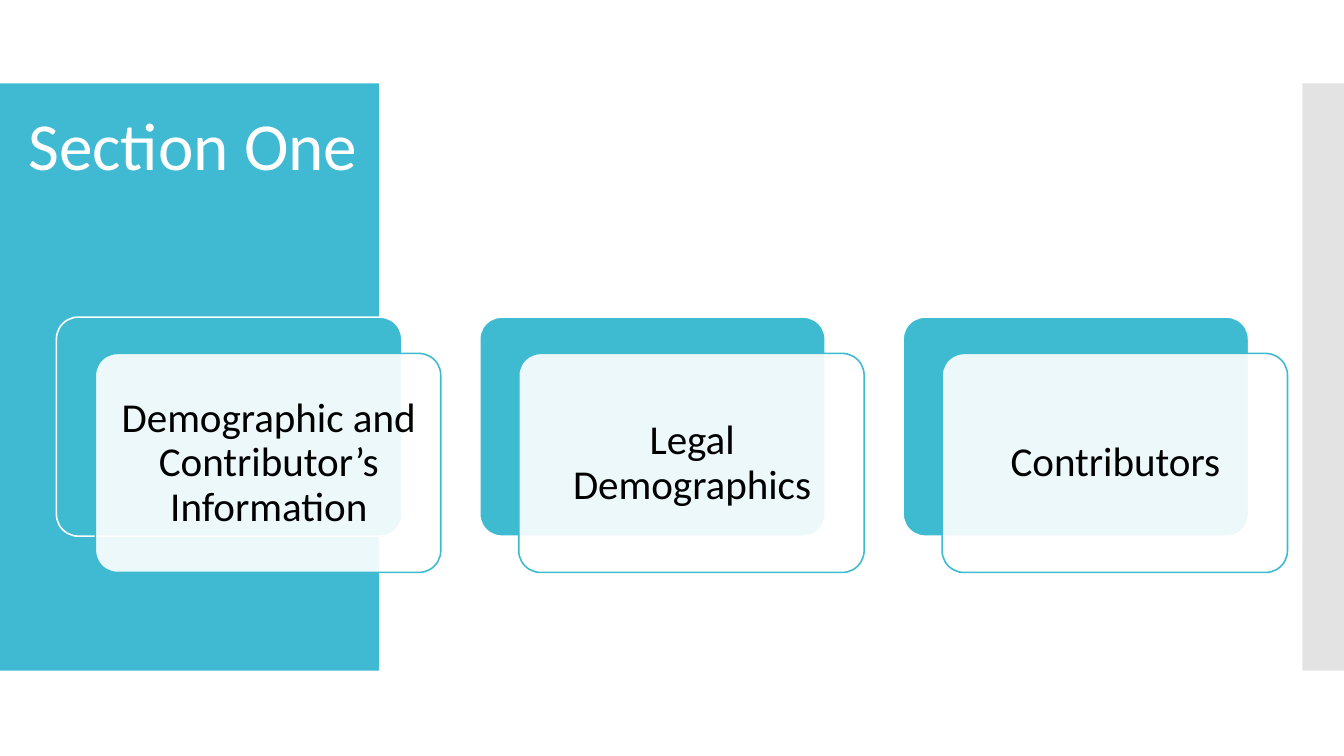
from lxml import etree
from pptx import Presentation, util as u
from pptx.dml.color import RGBColor
from pptx.enum import shapes, text
from pptx.oxml.ns import qn

COLORS = {"panel": "40BAD2", "card": "3EBAD1", "strip": "C8C8C8",
          "white": "FFFFFF", "black": "000000"}
TOPICS = ["Demographic and Contributor’s Information", "Legal Demographics", "Contributors"]


def add_block(kind, place, fill, line=None, opacity=100):
    block = slide.shapes.add_shape(kind, *map(u.Inches, place))
    block.shadow.inherit = False
    block.fill.solid()
    block.fill.fore_color.rgb = RGBColor.from_string(COLORS[fill])
    if opacity < 100:
        color = block.element.spPr.find(qn("a:solidFill"))[0]
        etree.SubElement(color, qn("a:alpha"), val=str(opacity * 1000))
    if line:
        block.line.color.rgb = RGBColor.from_string(COLORS[line])
        block.line.width = u.Pt(0.85)
        block.adjustments[0] = 0.1
    else:
        block.line.fill.background()
    return block


def write_text(box, words, size, color, inset, anchor, align, spacing):
    frame = box.text_frame
    frame.text = words
    settings = {"word_wrap": True, "auto_size": text.MSO_AUTO_SIZE.NONE, "vertical_anchor": anchor}
    for side in ("left", "top", "right", "bottom"):
        settings[f"margin_{side}"] = u.Inches(inset)
    for name, value in settings.items():
        setattr(frame, name, value)
    para = frame.paragraphs[0]
    para.alignment = align
    para.line_spacing = spacing
    span = para.runs[0]
    for name, value in {"name": "Calibri", "size": u.Pt(size)}.items():
        setattr(span.font, name, value)
    span.font.color.rgb = RGBColor.from_string(COLORS[color])


deck = Presentation()
deck.slide_width = u.Inches(10)
deck.slide_height = deck.slide_width * 9 // 16
slide = deck.slides.add_slide(deck.slide_layouts[5])

title = slide.shapes.title
for name, value in {"left": 0.11, "top": 0.5, "width": 9.47, "height": 0.97}.items():
    setattr(title, name, u.Inches(value))
write_text(title, "Section One", 36, "white", 0.1,
           text.MSO_ANCHOR.BOTTOM, text.PP_ALIGN.LEFT, 1.0)

rectangle = shapes.MSO_SHAPE.RECTANGLE
panel = add_block(rectangle, (0, 0.62, 2.82, 4.37), "panel")
strip = add_block(rectangle, (9.69, 0.62, 0.31, 4.37), "strip", opacity=50)
for backdrop in (panel, strip):
    title.element.addprevious(backdrop.element)

rounded = shapes.MSO_SHAPE.ROUNDED_RECTANGLE
for index, topic in enumerate(TOPICS):
    left = 0.42 + index * 3.15
    add_block(rounded, (left, 2.36, 2.57, 1.63), "card", "white")
    add_block(rounded, (left + 0.29, 2.63, 2.57, 1.63), "white", "card", 90)
    label = slide.shapes.add_textbox(*map(u.Inches, (left + 0.34, 2.68, 2.48, 1.54)))
    write_text(label, topic, 22, "black", 0.09,
               text.MSO_ANCHOR.MIDDLE, text.PP_ALIGN.CENTER, 0.9)

deck.save("out.pptx")
